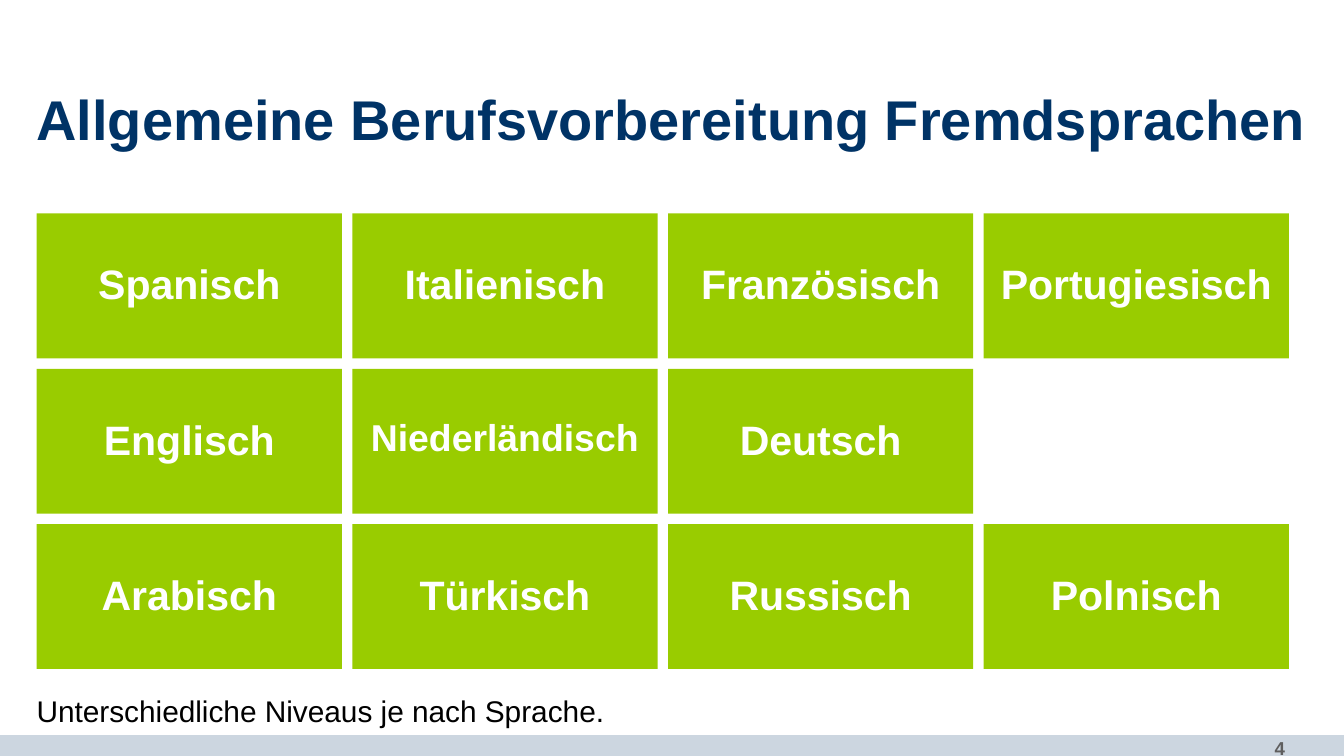
"""Build the slide on foreign languages in general vocational preparation."""
from pptx import Presentation
from pptx.dml.color import RGBColor
from pptx.enum.shapes import MSO_SHAPE as SHAPE
from pptx.enum.text import MSO_ANCHOR as ANCHOR, MSO_AUTO_SIZE as AUTO, PP_ALIGN as ALIGN
from pptx.oxml.ns import qn
from pptx.util import Pt


def rgb(value):
    return RGBColor.from_string(value)


def write(sp, text, size, color, bold, align, anchor=ANCHOR.TOP, insets=(0, 0, 0, 0)):
    tf = sp.text_frame
    left, top, right, bottom = map(Pt, insets)
    frame = {"word_wrap": True, "auto_size": AUTO.NONE, "vertical_anchor": anchor,
             "margin_left": left, "margin_top": top,
             "margin_right": right, "margin_bottom": bottom}
    for name, value in frame.items():
        setattr(tf, name, value)
    p = tf.paragraphs[0]
    p.alignment = align
    r = p.add_run()
    r.text = text
    for name, value in {"name": "Arial", "size": Pt(size), "bold": bold}.items():
        setattr(r.font, name, value)
    r.font.color.rgb = rgb(color)
    return p


prs = Presentation()
prs.slide_width, prs.slide_height = Pt(720), Pt(405)
s = prs.slides.add_slide(prs.slide_layouts[1])
title, body = s.placeholders

bar = s.shapes.add_shape(SHAPE.RECTANGLE, Pt(0), Pt(393.8), Pt(720), Pt(11.2))
bar.shadow.inherit = False
bar.fill.solid()
bar.fill.fore_color.rgb = rgb("CCD6E0")
bar.line.fill.background()

number = s.shapes.add_textbox(Pt(599), Pt(391.2), Pt(96.5), Pt(13.8))
write(number, "4", 10, "5F5F5F", True, ALIGN.RIGHT, insets=(7.2, 3.6, 7.2, 0))

boxes = [(title, (19.6, 43.2, 682, 38.2)), (body, (19.6, 370.8, 590.4, 24))]
for sp, box in boxes:
    for name, value in zip(("left", "top", "width", "height"), box):
        setattr(sp, name, Pt(value))

write(title, "Allgemeine Berufsvorbereitung Fremdsprachen", 30, "003366", True,
      ALIGN.LEFT, ANCHOR.BOTTOM)
p = write(body, "Unterschiedliche Niveaus je nach Sprache.", 16, "000000", False, ALIGN.LEFT)
p.line_spacing = 1.02
p.space_before = Pt(0)
pPr = p._p.get_or_add_pPr()
pPr.set("marL", "0")
pPr.set("indent", "0")
pPr.append(pPr.makeelement(qn("a:buNone"), {}))

languages = [
    ["Spanisch", "Italienisch", "Französisch", "Portugiesisch"],
    ["Englisch", "Niederländisch", "Deutsch"],
    ["Arabisch", "Türkisch", "Russisch", "Polnisch"],
]
for row, names in enumerate(languages):
    for col, language in enumerate(names):
        sp = s.shapes.add_shape(SHAPE.RECTANGLE, Pt(19.7 + 169.1 * col),
                                Pt(114.4 + 83.2 * row), Pt(163.5), Pt(77.6))
        sp.shadow.inherit = False
        sp.fill.solid()
        sp.fill.fore_color.rgb = rgb("99CC00")
        sp.line.fill.background()
        size = 20 if language == "Niederländisch" else 22
        write(sp, language, size, "FFFFFF", True, ALIGN.CENTER, insets=(7.2, 24.3, 7.2, 3.6))

prs.save("out.pptx")
